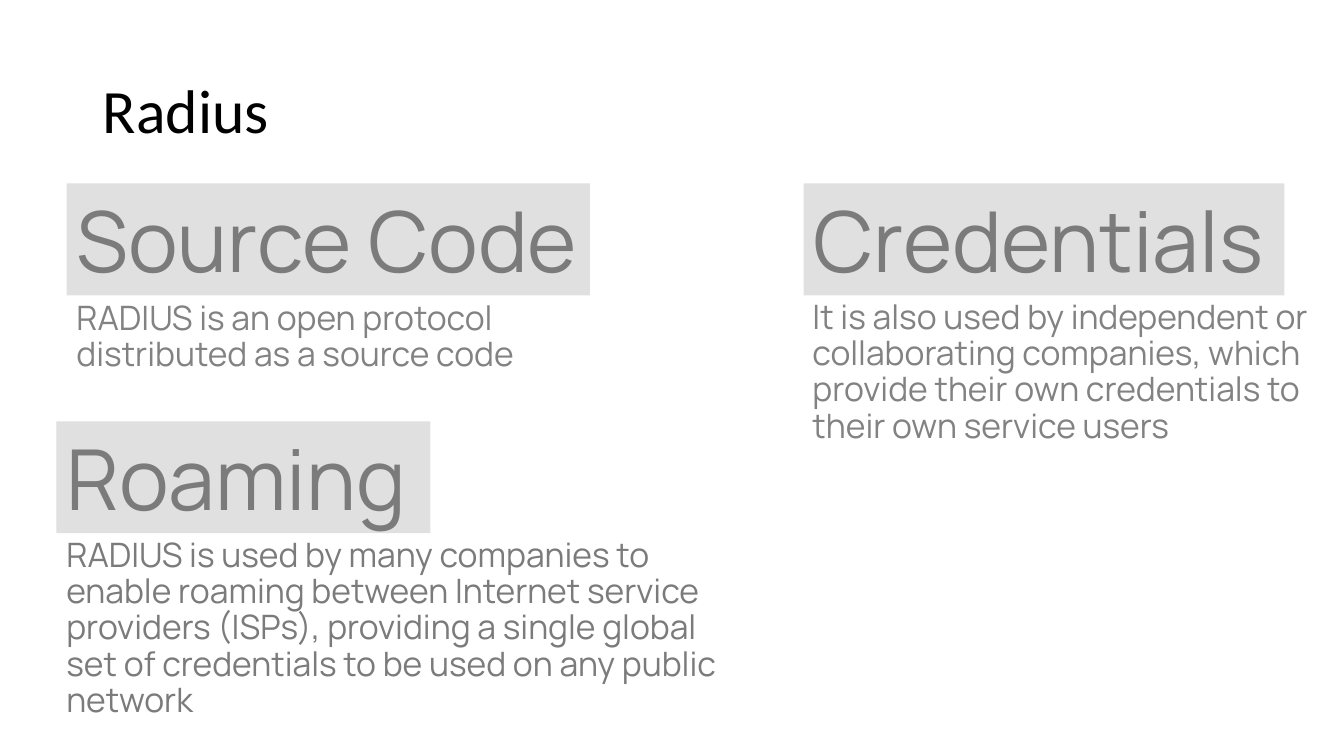
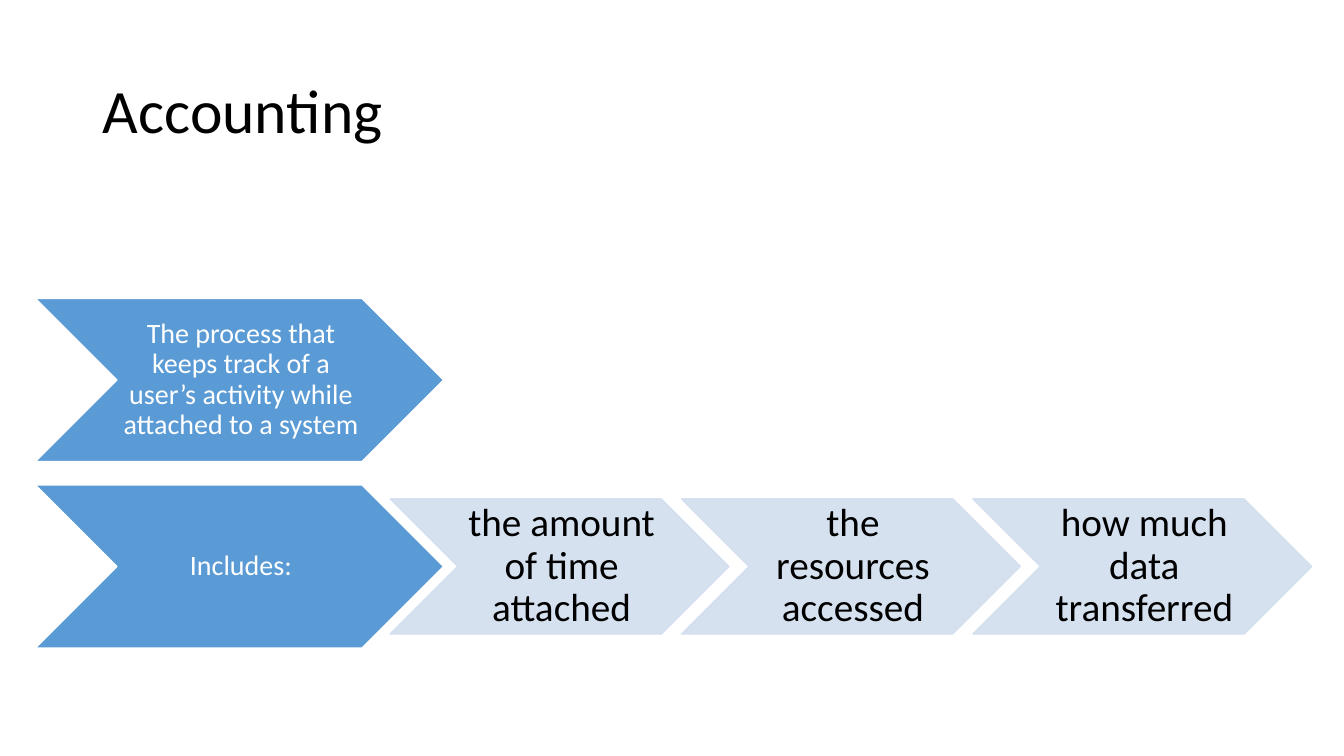
from dataclasses import dataclass

from lxml import etree
from pptx import Presentation
from pptx.dml.color import RGBColor
from pptx.enum import shapes, text
from pptx.oxml import ns
from pptx.util import Inches, Pt


@dataclass(frozen=True)
class Theme:
    title_font: str = "Calibri"
    topic_font: str = "Manrope"
    black: str = "000000"
    white: str = "FFFFFF"
    heading_grey: str = "7B7B7B"
    detail_grey: str = "828282"
    heading_fill: str = "E0E0E0"
    step_fill: str = "5B9BD5"
    item_fill: str = "D2DEEF"
    title_size: int = 44
    heading_size: int = 60
    detail_size: int = 24
    step_size: int = 20
    item_size: int = 28
    line_spacing: float = 0.9
    outline: int = 1


THEME = Theme()

RADIUS_TITLE = "Radius"
TOPICS = [
    ("Roaming", (0.56, 4.18, 3.71, 1.11),
     "RADIUS is used by many companies to enable roaming between Internet service "
     "providers (ISPs), providing a single global set of credentials to be used on "
     "any public network", (0.56, 5.29, 6.77, 2.09), THEME.heading_grey),
    ("Credentials", (7.97, 1.82, 4.77, 1.11),
     "It is also used by independent or collaborating companies, which provide their "
     "own credentials to their own service users",
     (7.96, 2.93, 5.21, 2.09), THEME.detail_grey),
    ("Source Code", (0.66, 1.82, 5.19, 1.11),
     "RADIUS is an open protocol distributed as a source code",
     (0.66, 2.94, 5.57, 1.02), THEME.detail_grey),
]

ACCOUNTING_TITLE = "Accounting"
STEPS = [
    ("The process that keeps track of a user’s activity while attached to a system", []),
    ("Includes:", ["the amount of time attached", "the resources accessed",
                   "how much data transferred"]),
]
STEP_LEFT, STEP_TOP, STEP_WIDTH, STEP_HEIGHT, STEP_PITCH = 0.35, 2.96, 4.05, 1.62, 1.85
ITEM_LEFT, ITEM_WIDTH, ITEM_HEIGHT, ITEM_PITCH = 3.87, 3.36, 1.34, 2.89


def inches(*lengths):
    return [Inches(length) for length in lengths]


def write(frame, words, font, size, color, align=text.PP_ALIGN.LEFT,
          spacing=THEME.line_spacing, before=0):
    paragraph = frame.paragraphs[0]
    paragraph.alignment = align
    paragraph.line_spacing = spacing
    paragraph.space_before = Pt(before)
    run = paragraph.add_run()
    run.text = words
    run.font.name = font
    run.font.size = Pt(size)
    run.font.color.rgb = RGBColor.from_string(color)


def fill(part, color):
    part.fill.solid()
    part.fill.fore_color.rgb = RGBColor.from_string(color)


def add_titled_slide(deck, words):
    slide = deck.slides.add_slide(deck.slide_layouts[5])
    title = slide.shapes.title
    title.left, title.top, title.width, title.height = inches(0.92, 0.4, 11.5, 1.45)
    title.text_frame.vertical_anchor = text.MSO_ANCHOR.MIDDLE
    write(title.text_frame, words, THEME.title_font, THEME.title_size, THEME.black)
    return slide


def add_topic(slide, heading_words, heading_box, detail_words, detail_box, detail_color):
    detail = slide.shapes.add_textbox(*inches(*detail_box))
    detail.text_frame.word_wrap = True
    write(detail.text_frame, detail_words, THEME.topic_font, THEME.detail_size,
          detail_color, before=10)

    heading = slide.shapes.add_textbox(*inches(*heading_box))
    fill(heading, THEME.heading_fill)
    heading.text_frame.word_wrap = False
    heading.text_frame.auto_size = text.MSO_AUTO_SIZE.SHAPE_TO_FIT_TEXT
    write(heading.text_frame, heading_words, THEME.topic_font, THEME.heading_size,
          THEME.heading_grey, spacing=1.0)


def add_chevron(slide, words, box, color, line_color, font_size, font_color,
                side_inset, edge_inset, opacity=100):
    chevron = slide.shapes.add_shape(shapes.MSO_SHAPE.CHEVRON, *inches(*box))
    chevron.shadow.inherit = False
    fill(chevron, color)
    chevron.line.color.rgb = RGBColor.from_string(line_color)
    chevron.line.width = Pt(THEME.outline)
    if opacity < 100:
        for tint in chevron.element.spPr.iter(ns.qn("a:srgbClr")):
            etree.SubElement(tint, ns.qn("a:alpha"), val=str(opacity * 1000))
    frame = chevron.text_frame
    frame.word_wrap = True
    frame.vertical_anchor = text.MSO_ANCHOR.MIDDLE
    frame.margin_left, frame.margin_right = inches(side_inset, 0)
    frame.margin_top = frame.margin_bottom = Inches(edge_inset)
    write(frame, words, THEME.title_font, font_size, font_color, text.PP_ALIGN.CENTER)


def build_radius(deck):
    slide = add_titled_slide(deck, RADIUS_TITLE)
    for topic in TOPICS:
        add_topic(slide, *topic)


def build_accounting(deck):
    slide = add_titled_slide(deck, ACCOUNTING_TITLE)
    for row, (step, items) in enumerate(STEPS):
        top = STEP_TOP + row * STEP_PITCH
        add_chevron(slide, step, (STEP_LEFT, top, STEP_WIDTH, STEP_HEIGHT),
                    THEME.step_fill, THEME.white, THEME.step_size, THEME.white,
                    0.03, 0.01)
        item_top = top + (STEP_HEIGHT - ITEM_HEIGHT) / 2
        for column, item in enumerate(items):
            left = ITEM_LEFT + column * ITEM_PITCH
            add_chevron(slide, item, (left, item_top, ITEM_WIDTH, ITEM_HEIGHT),
                        THEME.item_fill, THEME.item_fill, THEME.item_size, THEME.black,
                        0.04, 0.02, opacity=90)


def main():
    deck = Presentation()
    deck.slide_width, deck.slide_height = inches(13.33, 7.5)
    build_radius(deck)
    build_accounting(deck)
    deck.save("out.pptx")


if __name__ == "__main__":
    main()
